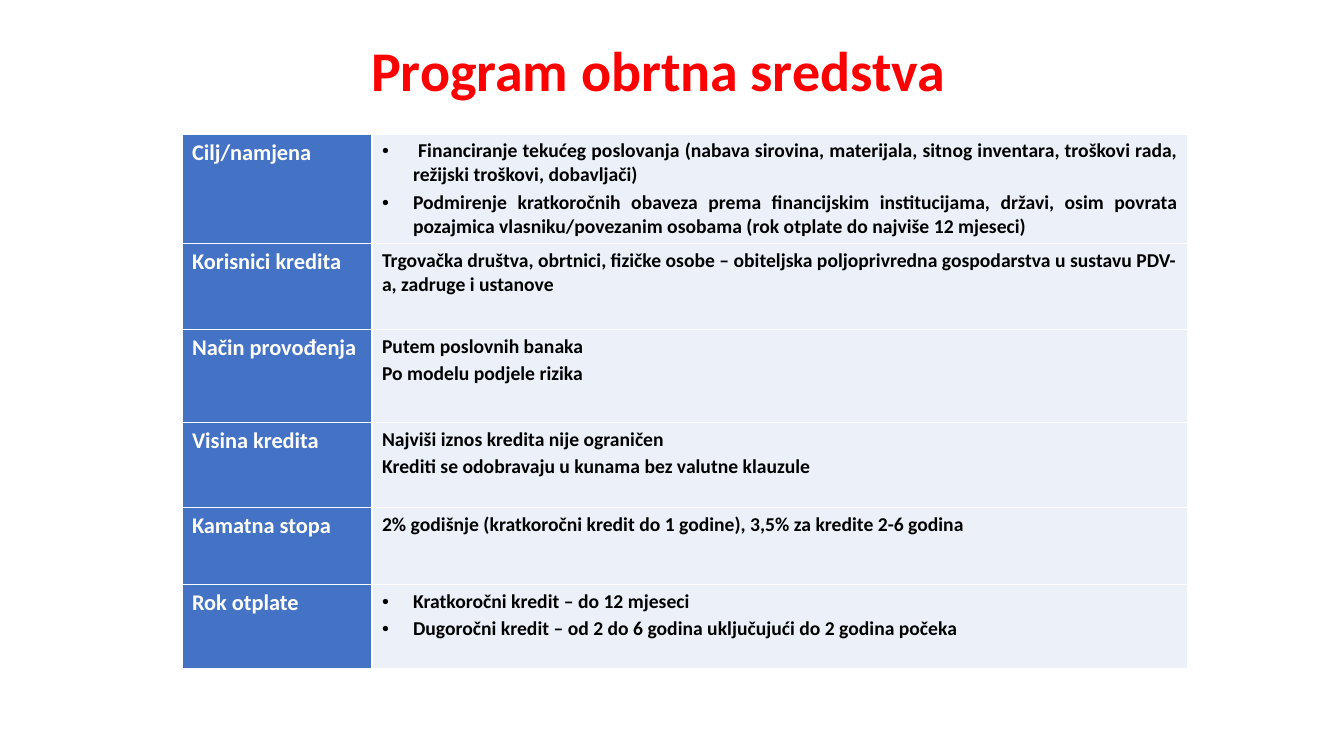
from lxml import etree
from pptx import Presentation
from pptx import util as u
from pptx.dml.color import RGBColor
from pptx.enum import text
from pptx.oxml.ns import qn

THEME = {
    "font": "Calibri",
    "title": {"size": 40, "color": "FF0000"},
    "label": {"size": 16, "color": "FFFFFF", "fill": "4472C4"},
    "detail": {"size": 14, "color": "000000", "fill": "DAE3F3", "alpha": 50},
    "border": "FFFFFF",
}
SCALE = 914400 / 100.8
INDENT = 31
COLUMNS = [190, 816]
# label, row height, bulleted, justified, paragraphs
ROWS = [
    ("Cilj/namjena", 109, True, True, [
        " Financiranje tekućeg poslovanja (nabava sirovina, materijala, sitnog "
        "inventara, troškovi rada, režijski troškovi, dobavljači)",
        "Podmirenje kratkoročnih obaveza prema financijskim institucijama, državi, "
        "osim povrata pozajmica vlasniku/povezanim osobama (rok otplate do najviše "
        "12 mjeseci)"]),
    ("Korisnici kredita", 86, False, False, [
        "Trgovačka društva, obrtnici, fizičke osobe – obiteljska poljoprivredna "
        "gospodarstva u sustavu PDV-a, zadruge i ustanove"]),
    ("Način provođenja", 93, False, False, [
        "Putem poslovnih banaka", "Po modelu podjele rizika"]),
    ("Visina kredita", 85, False, False, [
        "Najviši iznos kredita nije ograničen",
        "Krediti se odobravaju u kunama bez valutne klauzule"]),
    ("Kamatna stopa", 77, False, False, [
        "2% godišnje (kratkoročni kredit do 1 godine), 3,5% za kredite 2-6 godina"]),
    ("Rok otplate", 84, True, False, [
        "Kratkoročni kredit – do 12 mjeseci",
        "Dugoročni kredit – od 2 do 6 godina uključujući do 2 godina počeka"]),
]


def px(n):
    """Turn slide pixels into EMU."""
    return u.Emu(round(n * SCALE))


def set_font(p, style):
    values = {"name": THEME["font"], "size": u.Pt(style["size"]), "bold": True}
    for r in p.runs:
        for name, value in values.items():
            setattr(r.font, name, value)
        r.font.color.rgb = RGBColor.from_string(style["color"])


prs = Presentation()
prs.slide_width, prs.slide_height = px(1344), px(756)
s = prs.slides.add_slide(prs.slide_layouts[5])

title = s.shapes.title
for name, value in {"left": 128, "top": 38, "width": 842, "height": 54}.items():
    setattr(title, name, px(value))
tf = title.text_frame
tf.text = "Program obrtna sredstva"
frame = {"auto_size": text.MSO_AUTO_SIZE.NONE, "word_wrap": True,
         "vertical_anchor": text.MSO_ANCHOR.TOP, "margin_right": px(25)}
for name, value in frame.items():
    setattr(tf, name, value)
p = tf.paragraphs[0]
p.alignment = text.PP_ALIGN.RIGHT
p.line_spacing = 0.9
set_font(p, THEME["title"])

table = s.shapes.add_table(len(ROWS), len(COLUMNS), px(182), px(134),
                           px(sum(COLUMNS)), px(sum(row[1] for row in ROWS))).table
table.first_row = table.horz_banding = False
for column, width in zip(table.columns, COLUMNS):
    column.width = px(width)

for i, (label, height, bulleted, justified, details) in enumerate(ROWS):
    table.rows[i].height = px(height)
    for j, (kind, lines) in enumerate([("label", [label]), ("detail", details)]):
        style = THEME[kind]
        cell = table.cell(i, j)
        tc_pr = cell._tc.get_or_add_tcPr()
        for side in ("lnL", "lnR", "lnT", "lnB"):
            ln = etree.SubElement(tc_pr, qn(f"a:{side}"), w=str(u.Pt(1)))
            solid = etree.SubElement(ln, qn("a:solidFill"))
            etree.SubElement(solid, qn("a:srgbClr"), val=THEME["border"])
        cell.fill.solid()
        cell.fill.fore_color.rgb = RGBColor.from_string(style["fill"])
        if "alpha" in style:
            color = tc_pr.find(qn("a:solidFill")).find(qn("a:srgbClr"))
            etree.SubElement(color, qn("a:alpha"), val=str(style["alpha"] * 1000))

        tf = cell.text_frame
        for k, line in enumerate(lines):
            p = tf.add_paragraph() if k else tf.paragraphs[0]
            p.add_run().text = line
            if k:
                p.space_before = u.Pt(style["size"] * 0.2)
            if kind == "detail" and justified:
                p.alignment = text.PP_ALIGN.JUSTIFY
            if kind == "detail" and bulleted:
                p_pr = p._p.get_or_add_pPr()
                p_pr.set("marL", str(px(INDENT)))
                p_pr.set("indent", str(-px(INDENT)))
                etree.SubElement(p_pr, qn("a:buFont"), typeface="Arial")
                etree.SubElement(p_pr, qn("a:buChar"), char="•")
            set_font(p, style)

prs.save("out.pptx")
